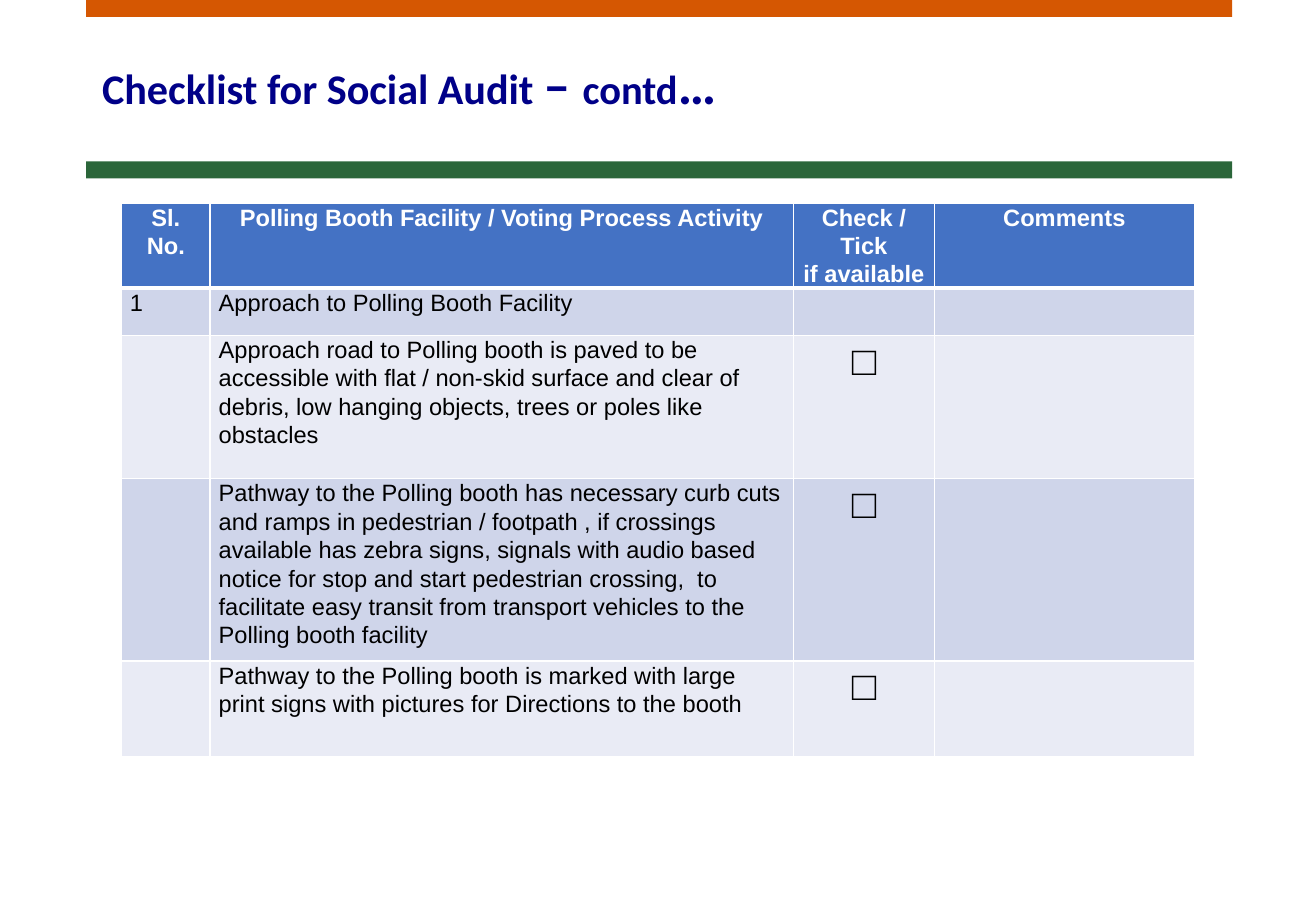
from dataclasses import dataclass

from lxml import etree
from pptx import Presentation
from pptx.dml.color import RGBColor
from pptx.enum import shapes, text
from pptx.oxml import ns
from pptx.util import Inches, Pt

TITLE = [("Checklist for Social Audit ", 25), ("– ", 32), ("contd", 24), ("…", 32)]
BOX = "□"
ROWS = [
    ("Sl. No.", "Polling Booth Facility / Voting Process Activity",
     "Check / Tick\nif available", "Comments"),
    ("1", "Approach to Polling Booth Facility", "", ""),
    ("", "Approach road to Polling booth is paved to be accessible with flat / "
     "non-skid surface and clear of debris, low hanging objects, trees or poles "
     "like obstacles", BOX, ""),
    ("", "Pathway to the Polling booth has necessary curb cuts and ramps in "
     "pedestrian / footpath , if crossings available has zebra signs, signals "
     "with audio based notice for stop and start pedestrian crossing,  to "
     "facilitate easy transit from transport vehicles to the Polling booth "
     "facility", BOX, ""),
    ("", "Pathway to the Polling booth is marked with large print signs with "
     "pictures for Directions to the booth", BOX, ""),
]
COL_WIDTHS = [0.73, 4.8, 1.16, 2.14]
ROW_HEIGHTS = [0.69, 0.39, 1.18, 1.5, 0.79]


@dataclass(frozen=True)
class Theme:
    title_font: str = "Calibri"
    table_font: str = "Arial"
    title: str = "000088"
    top_bar: str = "D55702"
    lower_bar: str = "2B663A"
    header: str = "4472C4"
    bands: tuple = ("CFD5EA", "E9EBF5")
    white: str = "FFFFFF"
    ink: str = "000000"
    table_size: int = 14
    box_size: int = 24


THEME = Theme()


def style_run(r, font, size, color, bold):
    r.font.name = font
    r.font.size = Pt(size)
    r.font.bold = bold
    r.font.color.rgb = RGBColor.from_string(color)


def add_bar(slide, top, color):
    sp = slide.shapes.add_shape(shapes.MSO_SHAPE.RECTANGLE,
                                Inches(0.71), Inches(top), Inches(9.43), Inches(0.14))
    sp.shadow.inherit = False
    sp.fill.solid()
    sp.fill.fore_color.rgb = RGBColor.from_string(color)
    sp.line.fill.background()


def add_title(slide):
    sp = slide.shapes.title
    sp.left, sp.top, sp.width, sp.height = map(Inches, (0.74, 0.4, 9.34, 0.63))
    tf = sp.text_frame
    tf.auto_size = text.MSO_AUTO_SIZE.NONE
    tf.vertical_anchor = text.MSO_ANCHOR.MIDDLE
    p = tf.paragraphs[0]
    p.alignment = text.PP_ALIGN.LEFT
    p.line_spacing = 0.9
    for words, size in TITLE:
        r = p.add_run()
        r.text = words
        style_run(r, THEME.title_font, size, THEME.title, True)


def set_borders(cell, widths):
    tc_pr = cell._tc.get_or_add_tcPr()
    for i, (side, width) in enumerate(widths.items()):
        ln = etree.Element(ns.qn(f"a:ln{side}"), w=str(Pt(width)))
        fill = etree.SubElement(ln, ns.qn("a:solidFill"))
        etree.SubElement(fill, ns.qn("a:srgbClr"), val=THEME.white)
        tc_pr.insert(i, ln)


def fill_cell(cell, row, col, words):
    header = row == 0
    cell.margin_left = cell.margin_right = Inches(0.07)
    cell.margin_top = cell.margin_bottom = 0
    cell.fill.solid()
    cell.fill.fore_color.rgb = RGBColor.from_string(
        THEME.header if header else THEME.bands[(row - 1) % 2])
    set_borders(cell, {"L": 1, "R": 1, "T": 3 if row == 1 else 1, "B": 3 if header else 1})
    cell.text_frame.text = words
    for p in cell.text_frame.paragraphs:
        p.line_spacing = 1.07
        p.alignment = text.PP_ALIGN.CENTER if header or col == 2 else text.PP_ALIGN.LEFT
        for r in p.runs:
            style_run(r, THEME.table_font,
                      THEME.box_size if words == BOX else THEME.table_size,
                      THEME.white if header else THEME.ink, header)


def add_checklist(slide):
    table = slide.shapes.add_table(
        len(ROWS), len(COL_WIDTHS), Inches(1), Inches(1.67),
        Inches(sum(COL_WIDTHS)), Inches(sum(ROW_HEIGHTS))).table
    for column, width in zip(table.columns, COL_WIDTHS):
        column.width = Inches(width)
    for row, (height, entries) in enumerate(zip(ROW_HEIGHTS, ROWS)):
        table.rows[row].height = Inches(height)
        for col, words in enumerate(entries):
            fill_cell(table.cell(row, col), row, col, words)


def main():
    prs = Presentation()
    prs.slide_width, prs.slide_height = Inches(10.83), Inches(7.5)
    slide = prs.slides.add_slide(prs.slide_layouts[5])
    add_bar(slide, 0, THEME.top_bar)
    add_bar(slide, 1.33, THEME.lower_bar)
    add_title(slide)
    add_checklist(slide)
    prs.save("out.pptx")


if __name__ == "__main__":
    main()
